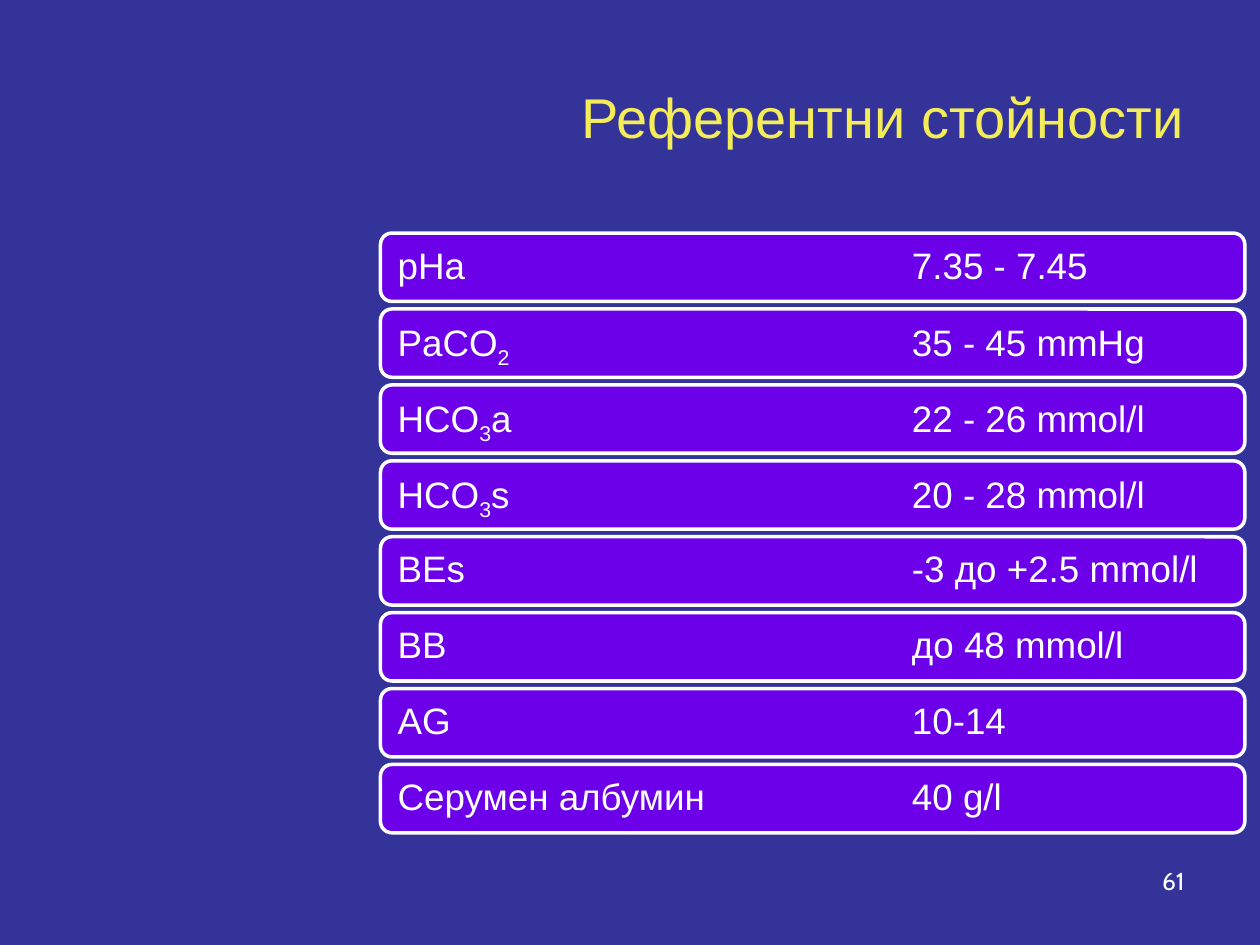
import pptx
import pptx.util
import pptx.dml.color
import pptx.enum.shapes
import pptx.enum.text
import pptx.oxml.ns
from dataclasses import dataclass
from lxml import etree

Inches, Pt = pptx.util.Inches, pptx.util.Pt
RGB = pptx.dml.color.RGBColor.from_string
ALIGN = pptx.enum.text.PP_ALIGN
ANCHOR = pptx.enum.text.MSO_ANCHOR


@dataclass(frozen=True)
class Theme:
    background: str = "333399"
    bar: str = "6C00E8"
    title: str = "F4ED58"
    text: str = "FFFFFF"
    font: str = "Arial"
    number_font: str = "Cabin"
    title_size: int = 32
    row_size: int = 21
    number_size: int = 14


THEME = Theme()
WIDTH, HEIGHT = 10, 7.5

# Each label is a list of (text, is subscript), followed by its range
VALUES = [
    ([("pHa", False)], "7.35 - 7.45"),
    ([("PaCO", False), ("2", True)], "35 - 45 mmHg"),
    ([("HCO", False), ("3", True), ("a", False)], "22 - 26 mmol/l"),
    ([("HCO", False), ("3", True), ("s", False)], "20 - 28 mmol/l"),
    ([("BЕs", False)], "-3 до +2.5 mmol/l"),
    ([("BB", False)], "до 48 mmol/l"),
    ([("AG", False)], "10-14"),
    ([("Серумен албумин", False)], "40 g/l"),
]


def add_run(p, text, size, color, font=THEME.font, subscript=False):
    r = p.add_run()
    r.text = text
    r.font.size, r.font.name = Pt(size), font
    r.font.color.rgb = RGB(color)
    if subscript:
        r._r.get_or_add_rPr().set("baseline", "-25000")


def add_tab_stop(p, position):
    qn = pptx.oxml.ns.qn
    tabs = etree.SubElement(p._p.get_or_add_pPr(), qn("a:tabLst"))
    etree.SubElement(tabs, qn("a:tab"), pos=str(Inches(position)), algn="l")


def place_title(s, box, text):
    sp = s.shapes.title
    sp.left, sp.top, sp.width, sp.height = map(Inches, box)
    tf = sp.text_frame
    tf.vertical_anchor = ANCHOR.MIDDLE
    p = tf.paragraphs[0]
    p.alignment = ALIGN.RIGHT
    add_run(p, text, THEME.title_size, THEME.title)


def place_bar(s, box, label, value):
    sp = s.shapes.add_shape(
        pptx.enum.shapes.MSO_SHAPE.ROUNDED_RECTANGLE, *map(Inches, box))
    sp.shadow.inherit = False
    sp.fill.solid()
    sp.fill.fore_color.rgb = RGB(THEME.bar)
    sp.line.color.rgb = RGB(THEME.text)
    sp.line.width = Pt(2)

    tf = sp.text_frame
    tf.word_wrap = True
    tf.vertical_anchor = ANCHOR.MIDDLE
    tf.margin_left = tf.margin_right = Inches(0.11)
    p = tf.paragraphs[0]
    add_tab_stop(p, 0.595 * box[2])
    p.alignment = ALIGN.LEFT
    p.line_spacing = 0.9
    for text, subscript in label:
        add_run(p, text, THEME.row_size, THEME.text, subscript=subscript)
    add_run(p, "\t" + value, THEME.row_size, THEME.text)


def place_values(s, box, values):
    left, top, width, height = box
    pitch = height / len(values)
    for i, (label, value) in enumerate(values):
        place_bar(s, (left, top + i * pitch, width, 0.9 * pitch), label, value)


def place_number(s, box, number):
    tf = s.shapes.add_textbox(*map(Inches, box)).text_frame
    tf.word_wrap = True
    p = tf.paragraphs[0]
    p.alignment = ALIGN.RIGHT
    add_run(p, number, THEME.number_size, THEME.text, THEME.number_font)


def main():
    prs = pptx.Presentation()
    prs.slide_width, prs.slide_height = Inches(WIDTH), Inches(HEIGHT)
    s = prs.slides.add_slide(prs.slide_layouts[5])
    s.background.fill.solid()
    s.background.fill.fore_color.rgb = RGB(THEME.background)

    margin = 0.05 * WIDTH
    # Title
    place_title(s, (margin, 0.04 * HEIGHT, WIDTH - 2 * margin, 1.25),
                "Референтни стойности")
    # Reference values, one bar for each
    place_values(s, (3.02, 1.85, 6.86, 4.82), VALUES)
    # Slide number
    place_number(s, (7.17, 0.91 * HEIGHT, WIDTH - margin - 7.17, 0.52), "61")
    prs.save("out.pptx")


if __name__ == "__main__":
    main()
